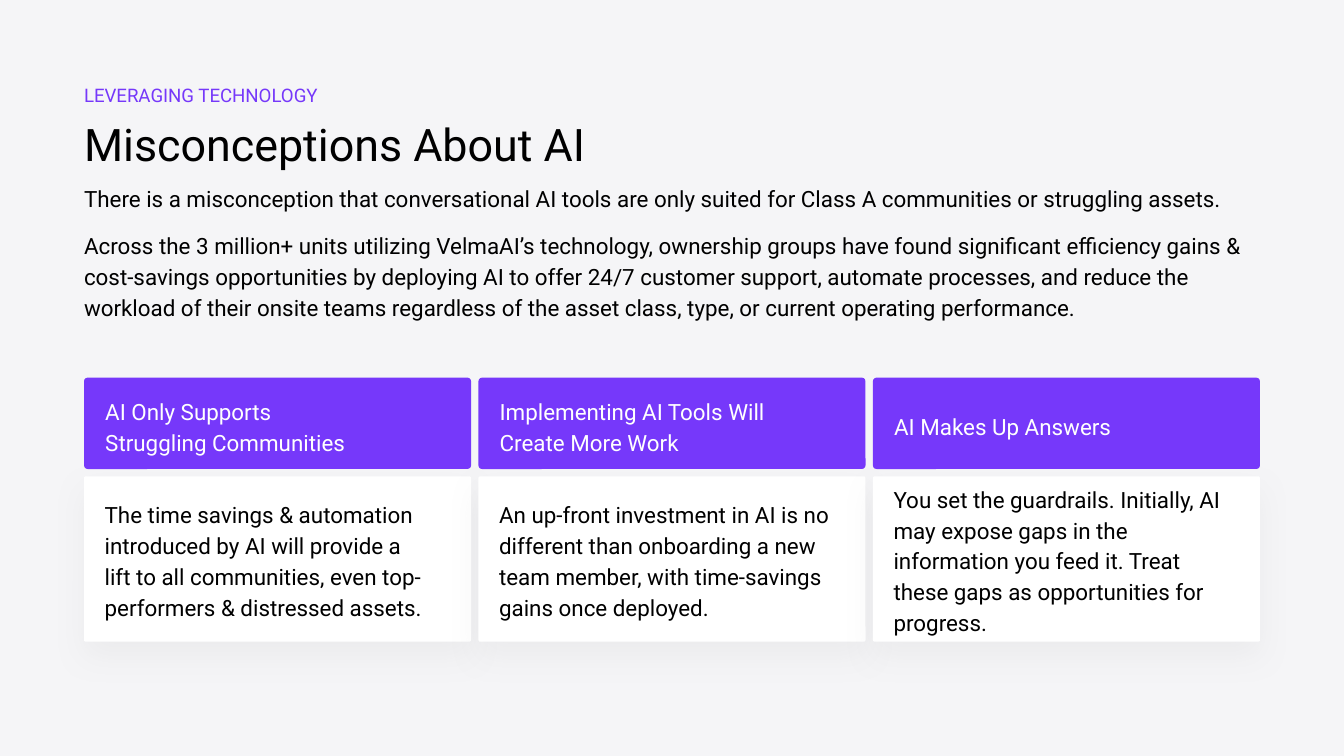
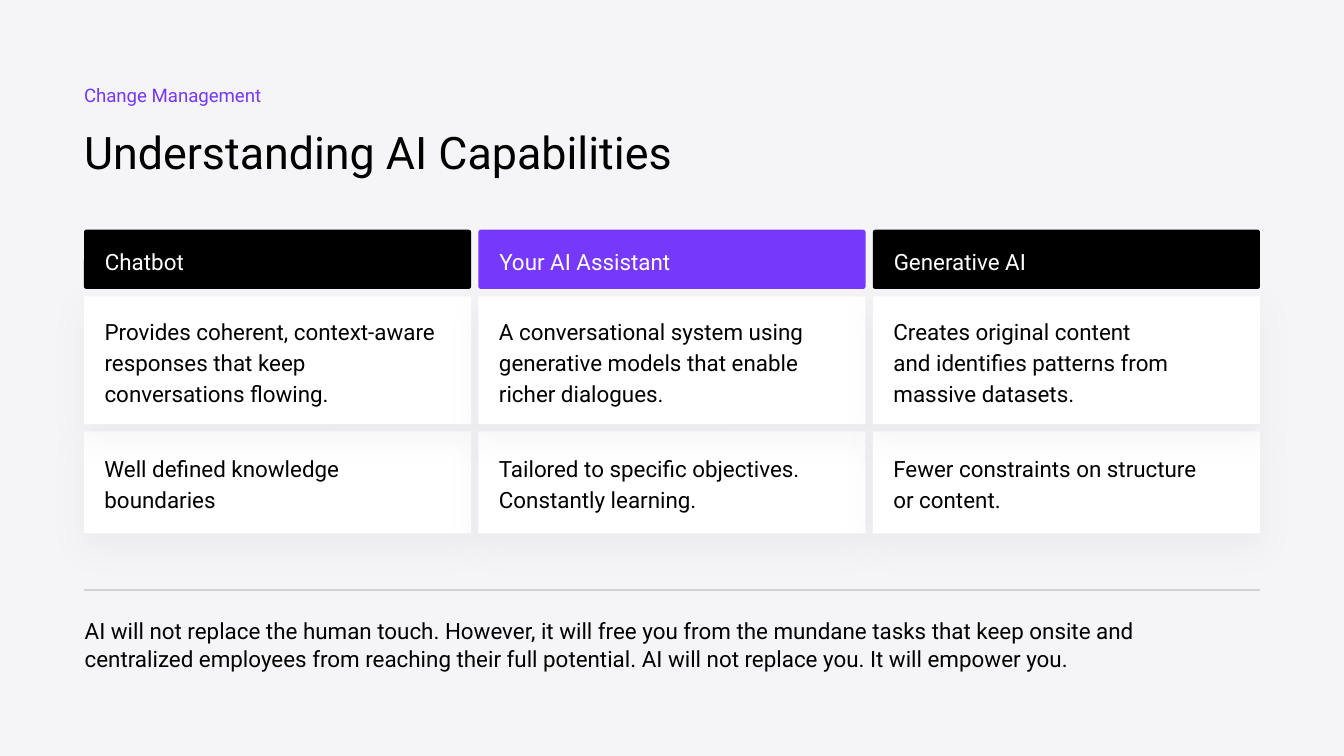
"""Build two slides on AI myths and AI skills."""
from lxml.etree import SubElement
from pptx import Presentation
from pptx.dml.color import RGBColor
from pptx.enum.shapes import MSO_CONNECTOR, MSO_SHAPE
from pptx.enum.text import MSO_ANCHOR, MSO_AUTO_SIZE, PP_ALIGN
from pptx.oxml.ns import qn
from pptx.util import Inches, Pt

HUES = {
    "back": "F5F5F7",
    "brand": "7638FA",
    "ink": "000000",
    "card": "FFFFFF",
    "rule": "D3D3D5",
    "shade": "999999",
}
FONT = "Roboto"
PAGE = 10
EDGE = PAGE / 16
WIDE, COLS = 2.88, 3
GAP = (PAGE - 2 * EDGE - COLS * WIDE) / (COLS - 1)

SLIDES = [
    {
        "label": "LEVERAGING TECHNOLOGY",
        "title": ("Misconceptions About AI", 4.02, 1),
        "body": {
            "box": (EDGE, 1.35, 8.81, 1.02),
            "pitch": 1.15,
            "after": 8.5,
            "text": [
                "There is a misconception that conversational AI tools are only suited for "
                "Class A communities or struggling assets.",
                "Across the 3 million+ units utilizing VelmaAI’s technology, ownership groups "
                "have found significant efficiency gains & cost-savings opportunities by "
                "deploying AI to offer 24/7 customer support, automate processes, and reduce "
                "the workload of their onsite teams regardless of the asset class, type, or "
                "current operating performance.",
            ],
        },
        "top": 2.81,
        "highs": [0.68, 1.23],
        "inset": 0.12,
        "heads": ["brand", "brand", "brand"],
        "rows": [
            ["AI Only Supports \nStruggling Communities",
             "Implementing AI Tools Will \nCreate More Work",
             "AI Makes Up Answers"],
            ["The time savings & automation introduced by AI will provide a \n"
             "lift to all communities, even top-performers & distressed assets.",
             "An up-front investment in AI is no different than onboarding a new team "
             "member, with time-savings gains once deployed.",
             "You set the guardrails. Initially, AI may expose gaps in the information "
             "you feed it. Treat these gaps as opportunities for progress."],
        ],
    },
    {
        "label": "Change Management",
        "title": ("Understanding AI Capabilities", 6.41, 1.15),
        "body": {
            "box": (0.63, 4.58, 8.17, 0.41),
            "pitch": 1.05,
            "after": 12,
            "text": [
                "AI will not replace the human touch. However, it will free you from the "
                "mundane tasks that keep onsite and centralized employees from reaching "
                "their full potential. AI will not replace you. It will empower you.",
            ],
        },
        "rule": 4.39,
        "top": 1.71,
        "highs": [0.44, 0.95, 0.76],
        "inset": 0.1,
        "heads": ["ink", "brand", "ink"],
        "rows": [
            ["Chatbot", "Your AI Assistant", "Generative AI"],
            ["Provides coherent, context-aware responses that keep conversations flowing.",
             "A conversational system using generative models that enable richer dialogues.",
             "Creates original content \nand identifies patterns from massive datasets."],
            ["Well defined knowledge boundaries",
             "Tailored to specific objectives. Constantly learning.",
             "Fewer constraints on structure \nor content."],
        ],
    },
]


def tint(name):
    return RGBColor.from_string(HUES[name])


def place(shape, box):
    shape.left, shape.top, shape.width, shape.height = map(Inches, box)


def write(shape, texts, size, hue, pitch=1, after=0, pads=(0, 0, 0, 0), anchor=MSO_ANCHOR.TOP):
    frame = shape.text_frame
    frame.word_wrap = True
    frame.auto_size = MSO_AUTO_SIZE.NONE
    frame.vertical_anchor = anchor
    (frame.margin_left, frame.margin_top,
     frame.margin_right, frame.margin_bottom) = map(Inches, pads)
    for spot, text in enumerate(texts):
        para = frame.add_paragraph() if spot else frame.paragraphs[0]
        props = para._p.get_or_add_pPr()
        props.set("marL", "0")
        props.set("indent", "0")
        SubElement(props, qn("a:buNone"))
        para.alignment = PP_ALIGN.LEFT
        para.line_spacing = pitch
        para.space_before = Pt(0)
        para.space_after = Pt(after)
        for part, line in enumerate(text.split("\n")):
            if part:
                para.add_line_break()
            run = para.add_run()
            run.text = line
            run.font.name = FONT
            run.font.size = Pt(size)
            run.font.color.rgb = tint(hue)


def shade(shape):
    glow = SubElement(shape._element.spPr.find(qn("a:effectLst")), qn("a:outerShdw"),
                      blurRad=str(Pt(16.9)), dist=str(Pt(7.5)), dir="5400000",
                      algn="bl", rotWithShape="0")
    color = SubElement(glow, qn("a:srgbClr"), val=HUES["shade"])
    SubElement(color, qn("a:alpha"), val="10000")


def add_card(slide, box, text, fill, top=None):
    """Draw a header when top is given, else a white card with a shadow."""
    head = top is not None
    card = slide.shapes.add_shape(MSO_SHAPE.ROUNDED_RECTANGLE, *map(Inches, box))
    card.adjustments[0] = 0.04 if head else 0.01
    card.fill.solid()
    card.fill.fore_color.rgb = tint(fill)
    card.line.fill.background()
    card.shadow.inherit = False
    if not head:
        shade(card)
    pads = (0.15, top, 0.15, 0.1) if head else (0.15,) * 4
    write(card, [text], 12, "card" if head else "ink", 1.15, pads=pads,
          anchor=MSO_ANCHOR.MIDDLE)


def add_grid(slide, data):
    highs = data["highs"]
    for col, hue in enumerate(data["heads"]):
        for row in reversed(range(len(highs))):
            top = data["top"] + sum(highs[:row]) + row * GAP
            box = (EDGE + col * (WIDE + GAP), top, WIDE, highs[row])
            text = data["rows"][row][col]
            if row:
                add_card(slide, box, text, "card")
            else:
                add_card(slide, box, text, hue, data["inset"])


def add_rule(slide, high):
    rule = slide.shapes.add_connector(
        MSO_CONNECTOR.STRAIGHT, *map(Inches, (EDGE, high, PAGE - EDGE, high)))
    rule.line.color.rgb = tint("rule")
    rule.line.width = Pt(0.75)
    SubElement(rule._element.spPr, qn("a:effectLst"))


def add_page(deck, data):
    slide = deck.slides.add_slide(deck.slide_layouts[1])
    slide.background.fill.solid()
    slide.background.fill.fore_color.rgb = tint("back")
    text, wide, pitch = data["title"]
    title, body = slide.placeholders
    place(title, (EDGE, 0.87, wide, 0.4))
    write(title, [text], 24, "ink", pitch)
    part = data["body"]
    place(body, part["box"])
    write(body, part["text"], 12, "ink", part["pitch"], part["after"])
    label = slide.shapes.add_textbox(*map(Inches, (EDGE, EDGE, 4.25, 0.17)))
    write(label, [data["label"]], 10, "brand")
    if "rule" in data:
        add_rule(slide, data["rule"])
    add_grid(slide, data)


def main():
    deck = Presentation()
    deck.slide_width = Inches(PAGE)
    deck.slide_height = Inches(PAGE * 9 / 16)
    for data in SLIDES:
        add_page(deck, data)
    deck.save("out.pptx")


if __name__ == "__main__":
    main()
